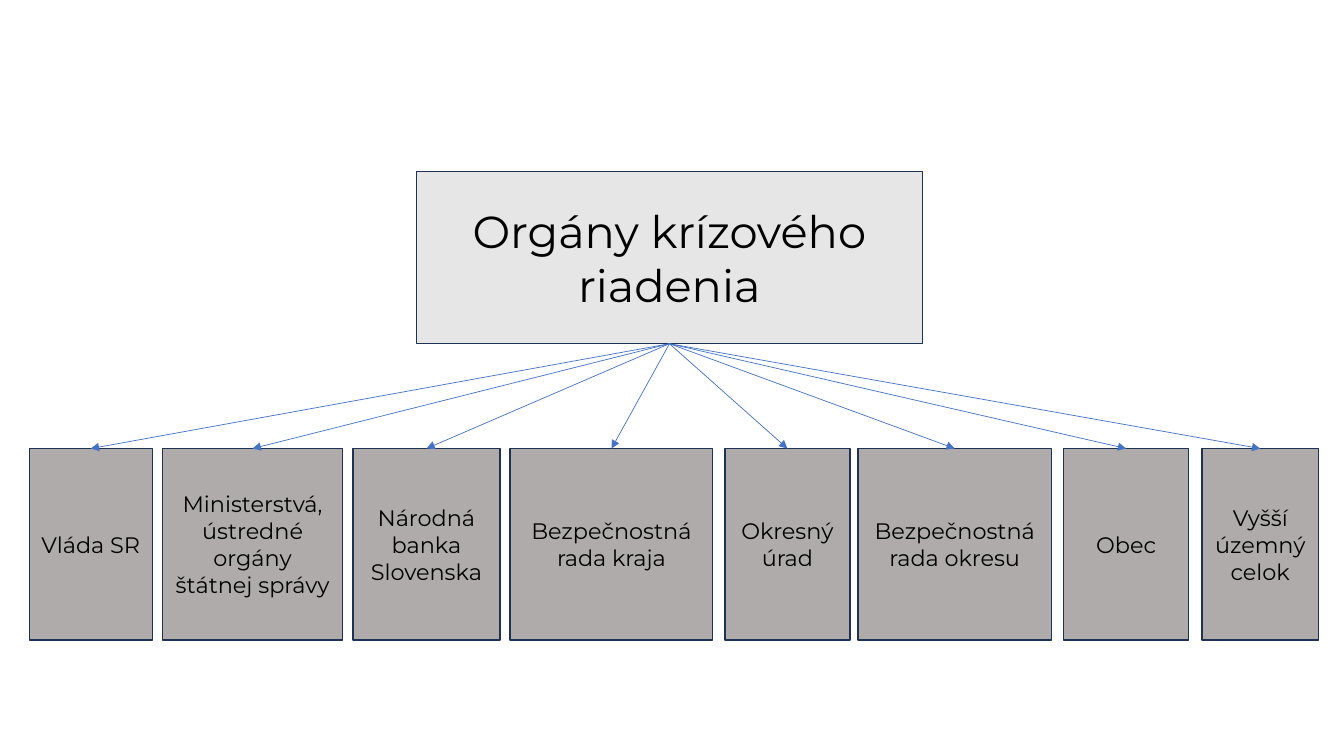
import lxml.etree
import pptx
import pptx.dml.color
import pptx.enum.shapes
import pptx.enum.text
import pptx.oxml.ns
import pptx.util

Inches = pptx.util.Inches

COLORS = {
    "heading": "E7E6E6",
    "body": "AFABAB",
    "border": "1E3256",
    "arrow": "4472C4",
    "text": "000000",
}
FONT = "Montserrat"
HEADING = "Orgány krízového riadenia"
HEADING_BOX = (4.13, 1.7, 5.02, 1.71)
ROW_TOP, ROW_HEIGHT = 4.45, 1.9
BODIES = [
    (0.29, 1.22, "Vláda SR"),
    (1.61, 1.79, "Ministerstvá,\nústredné orgány štátnej správy"),
    (3.5, 1.46, "Národná banka Slovenska"),
    (5.06, 2.01, "Bezpečnostná rada kraja"),
    (7.19, 1.24, "Okresný úrad"),
    (8.51, 1.92, "Bezpečnostná rada okresu"),
    (10.55, 1.24, "Obec"),
    (11.92, 1.16, "Vyšší územný celok"),
]


def rgb(name):
    """Return the named colour."""
    return pptx.dml.color.RGBColor.from_string(COLORS[name])


def set_all(target, values):
    """Set each attribute of the target from a dict."""
    for name, value in values.items():
        setattr(target, name, value)


def format_box(shape, text, fill, size):
    """Fill and outline a box and centre its text."""
    shape.fill.solid()
    shape.fill.fore_color.rgb = rgb(fill)
    shape.line.color.rgb = rgb("border")
    shape.line.width = pptx.util.Pt(1)
    frame = shape.text_frame
    frame.text = text
    set_all(frame, {
        "word_wrap": True,
        "auto_size": pptx.enum.text.MSO_AUTO_SIZE.NONE,
        "vertical_anchor": pptx.enum.text.MSO_ANCHOR.MIDDLE,
    })
    for para in frame.paragraphs:
        para.alignment = pptx.enum.text.PP_ALIGN.CENTER
        for span in para.runs:
            set_all(span.font, {"name": FONT, "size": pptx.util.Pt(size)})
            span.font.color.rgb = rgb("text")


def add_heading(slide, box):
    """Place the title as the top box of the chart."""
    title = slide.shapes.title
    set_all(title, dict(zip(("left", "top", "width", "height"), map(Inches, box))))
    format_box(title, HEADING, "heading", 32)
    return title


def add_body(slide, box, text):
    """Add one box of the lower row."""
    shape = slide.shapes.add_shape(
        pptx.enum.shapes.MSO_SHAPE.RECTANGLE, *map(Inches, box))
    shape.shadow.inherit = False
    format_box(shape, text, "body", 16)
    return shape


def add_arrow(slide, parent, child):
    """Join the bottom of the parent to the top of the child."""
    arrow = slide.shapes.add_connector(
        pptx.enum.shapes.MSO_CONNECTOR.STRAIGHT, 0, 0, 0, 0)
    arrow.begin_connect(parent, 2)
    arrow.end_connect(child, 0)
    arrow.line.color.rgb = rgb("arrow")
    arrow.line.width = pptx.util.Pt(0.5)
    qn = pptx.oxml.ns.qn
    properties = arrow.element.spPr
    lxml.etree.SubElement(properties.find(qn("a:ln")), qn("a:tailEnd"), type="triangle")
    lxml.etree.SubElement(properties, qn("a:effectLst"))


def build_chart_slide(deck):
    """Build the slide with the heading, its bodies and the arrows."""
    slide = deck.slides.add_slide(deck.slide_layouts[5])
    heading = add_heading(slide, HEADING_BOX)
    bodies = [add_body(slide, (left, ROW_TOP, width, ROW_HEIGHT), text)
              for left, width, text in BODIES]
    for body in bodies:
        add_arrow(slide, heading, body)


def main():
    """Create and save the deck."""
    deck = pptx.Presentation()
    set_all(deck, {"slide_width": Inches(13.33), "slide_height": Inches(7.5)})
    build_chart_slide(deck)
    deck.save("out.pptx")


if __name__ == "__main__":
    main()
